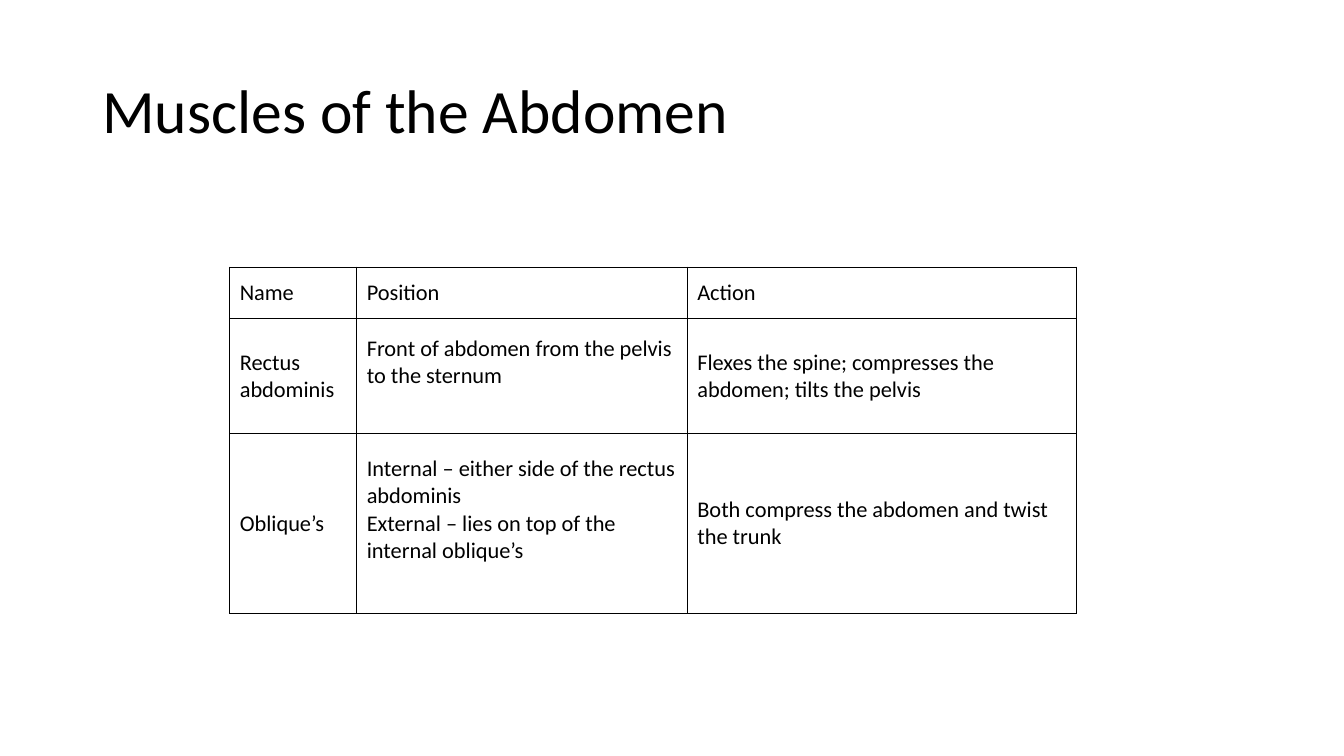
from dataclasses import dataclass

from lxml import etree
from pptx import Presentation
from pptx.dml.color import RGBColor
from pptx.enum.text import MSO_ANCHOR
from pptx.oxml.ns import qn
from pptx.util import Cm, Pt

MIDDLE = MSO_ANCHOR.MIDDLE


@dataclass(frozen=True)
class Theme:
    font: str = "Calibri"
    ink: str = "000000"
    head: int = 44
    body: int = 16
    rule: float = 0.75


class Deck:
    """Holds the style and the current slide."""

    def __init__(self, theme, show):
        self.theme = theme
        self.slide = show.slides.add_slide(show.slide_layouts[6])

    def style(self, frame, size):
        look = {"name": self.theme.font, "size": Pt(size), "bold": False}
        for para in frame.paragraphs:
            for run in para.runs:
                for key, value in look.items():
                    setattr(run.font, key, value)
                run.font.color.rgb = RGBColor.from_string(self.theme.ink)

    def title(self, text, left, top, width, height):
        box = self.slide.shapes.add_textbox(Cm(left), Cm(top), Cm(width), Cm(height))
        frame = box.text_frame
        frame.word_wrap = True
        frame.vertical_anchor = MIDDLE
        frame.text = text
        frame.paragraphs[0].line_spacing = 0.9
        self.style(frame, self.theme.head)

    def border(self, cell):
        props = cell._tc.get_or_add_tcPr()
        for side in ("lnL", "lnR", "lnT", "lnB"):
            line = etree.SubElement(props, qn(f"a:{side}"), w=str(Pt(self.theme.rule)))
            fill = etree.SubElement(line, qn("a:solidFill"))
            etree.SubElement(fill, qn("a:srgbClr"), val=self.theme.ink)

    def table(self, rows, left, top, widths, heights, lifts):
        grid = self.slide.shapes.add_table(
            len(rows), len(widths), Cm(left), Cm(top),
            Cm(sum(widths)), Cm(sum(heights))).table
        for key in ("first_row", "horz_banding"):
            setattr(grid, key, False)
        for col, width in zip(grid.columns, widths):
            col.width = Cm(width)
        for row, height in zip(grid.rows, heights):
            row.height = Cm(height)
        for r, row in enumerate(rows):
            for c, text in enumerate(row):
                cell = grid.cell(r, c)
                cell.text = text
                cell.vertical_anchor = MIDDLE
                # Extra bottom margin lifts the text above the middle
                cell.margin_bottom = Cm(0.13 + lifts.get((r, c), 0))
                self.style(cell.text_frame, self.theme.body)
                self.border(cell)
                cell.fill.background()


def main():
    show = Presentation()
    show.slide_width, show.slide_height = Cm(33.87), Cm(19.05)
    deck = Deck(Theme(), show)

    # Heading
    deck.title("Muscles of the Abdomen", 2.33, 1.01, 29.21, 3.68)

    # Muscle table
    rows = [
        ("Name", "Position", "Action"),
        ("Rectus abdominis",
         "Front of abdomen from the pelvis to the sternum",
         "Flexes the spine; compresses the abdomen; tilts the pelvis"),
        ("Oblique’s",
         "Internal – either side of the rectus abdominis\v"
         "External – lies on top of the internal oblique’s",
         "Both compress the abdomen and twist the trunk"),
    ]
    line = 0.69
    deck.table(rows, 5.79, 6.73, (3.2, 8.33, 9.8), (1.3, 2.9, 4.52),
               {(1, 1): line, (2, 1): line})

    show.save("out.pptx")


if __name__ == "__main__":
    main()
